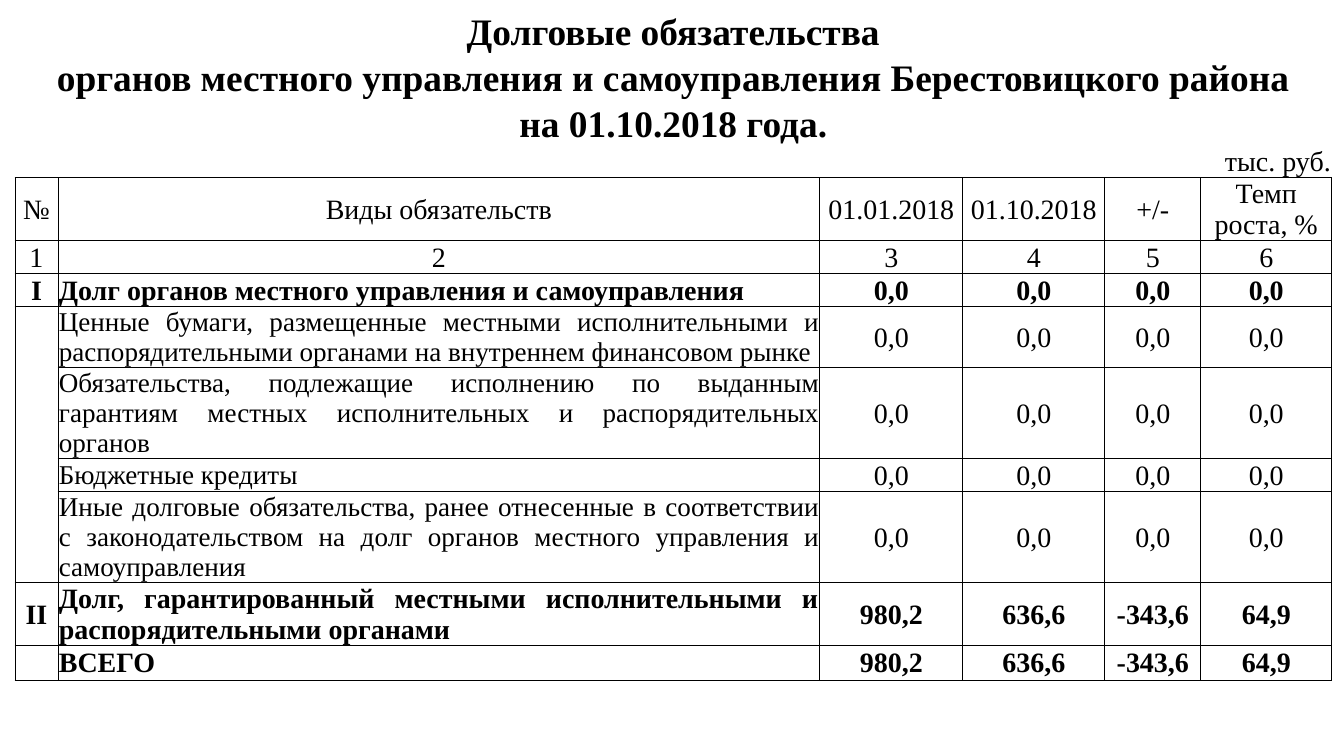
from lxml import etree
from pptx import Presentation
from pptx.dml.color import RGBColor
from pptx.enum.text import MSO_ANCHOR, PP_ALIGN
from pptx.oxml.ns import qn
from pptx.util import Emu, Pt

SCALE = 914400 / 134.4
BLACK = RGBColor(0, 0, 0)
WHITE = RGBColor(255, 255, 255)
FONT = "Times New Roman"
MID, LOW, TOP = MSO_ANCHOR.MIDDLE, MSO_ANCHOR.BOTTOM, MSO_ANCHOR.TOP
LEFT, CENTER, RIGHT, FULL = PP_ALIGN.LEFT, PP_ALIGN.CENTER, PP_ALIGN.RIGHT, PP_ALIGN.JUSTIFY


def px(n):
    return Emu(round(n * SCALE))


def style(cell, text, size, bold, align, anchor, sides, fill):
    props = cell._tc.get_or_add_tcPr()
    for side in "LRTB":
        line = etree.SubElement(props, qn("a:ln" + side), w=str(Pt(0.5)))
        if side in sides:
            paint = etree.SubElement(line, qn("a:solidFill"))
            etree.SubElement(paint, qn("a:srgbClr"), val=str(BLACK))
        else:
            etree.SubElement(line, qn("a:noFill"))
    if fill:
        cell.fill.solid()
        cell.fill.fore_color.rgb = WHITE
    else:
        cell.fill.background()
    cell.margin_left = cell.margin_right = cell.margin_top = px(1)
    cell.margin_bottom = 0
    cell.vertical_anchor = anchor
    cell.text = text
    for par in cell.text_frame.paragraphs:
        par.alignment = align
        par.font.name = FONT
        par.font.size = Pt(size)
        par.font.bold = bold
        par.font.color.rgb = BLACK


heads = [
    "Долговые обязательства",
    "органов местного управления и самоуправления Берестовицкого района",
    "на 01.10.2018 года.",
    "тыс. руб.",
]
zeros = ["0,0"] * 4
sums = ["980,2", "636,6", "-343,6", "64,9"]
body = [
    ["№", "Виды обязательств", "01.01.2018", "01.10.2018", "+/-", "Темп\nроста, %"],
    ["1", "2", "3", "4", "5", "6"],
    ["I", "Долг органов местного управления и самоуправления"] + zeros,
    ["", "Ценные бумаги, размещенные местными исполнительными и "
     "распорядительными органами на внутреннем финансовом рынке"] + zeros,
    ["", "Обязательства, подлежащие исполнению по выданным гарантиям "
     "местных исполнительных и распорядительных органов"] + zeros,
    ["", "Бюджетные кредиты"] + zeros,
    ["", "Иные долговые обязательства, ранее отнесенные в соответствии с "
     "законодательством на долг органов местного управления и самоуправления"] + zeros,
    ["II", "Долг, гарантированный местными исполнительными и "
     "распорядительными органами"] + sums,
    ["", "ВСЕГО"] + sums,
]
widths = [43, 762, 143, 142, 96, 131]
heights = [46, 46, 46, 32, 63, 33, 33, 61, 91, 33, 91, 62, 35]

deck = Presentation()
deck.slide_width, deck.slide_height = px(1344), px(756)
slide = deck.slides.add_slide(deck.slide_layouts[6])
frame = slide.shapes.add_table(
    len(heights), len(widths), px(15), px(8), px(sum(widths)), px(sum(heights)))
table = frame.table
table.first_row = table.horz_banding = False
for col, width in zip(table.columns, widths):
    col.width = px(width)
for row, height in zip(table.rows, heights):
    row.height = px(height)

for r, text in enumerate(heads):
    unit = r == 3
    for c in range(6):
        style(table.cell(r, c), "" if c else text, 15 if unit else 20, not unit,
              RIGHT if unit else CENTER, LOW, "B" if unit else "", r == 2)
    table.cell(r, 0).merge(table.cell(r, 5))

first, last = 3, 6
for r, row in enumerate(body):
    item = first <= r <= last
    bold = r > 1 and not item
    for c, text in enumerate(row):
        size, align, sides = 15, CENTER, "LRTB"
        anchor = LOW if r == 1 else MID
        if c == 0 and item:
            sides = "LR" + "T" * (r == first) + "B" * (r == last)
        if c == 1 and r > 1:
            align = LEFT if text == "ВСЕГО" else FULL
            size = 14.5 if item else 15
            anchor = TOP if r == 4 else MID
        style(table.cell(r + len(heads), c), text, size, bold, align, anchor,
              sides, r > 1 and c > 1)

deck.save("out.pptx")
